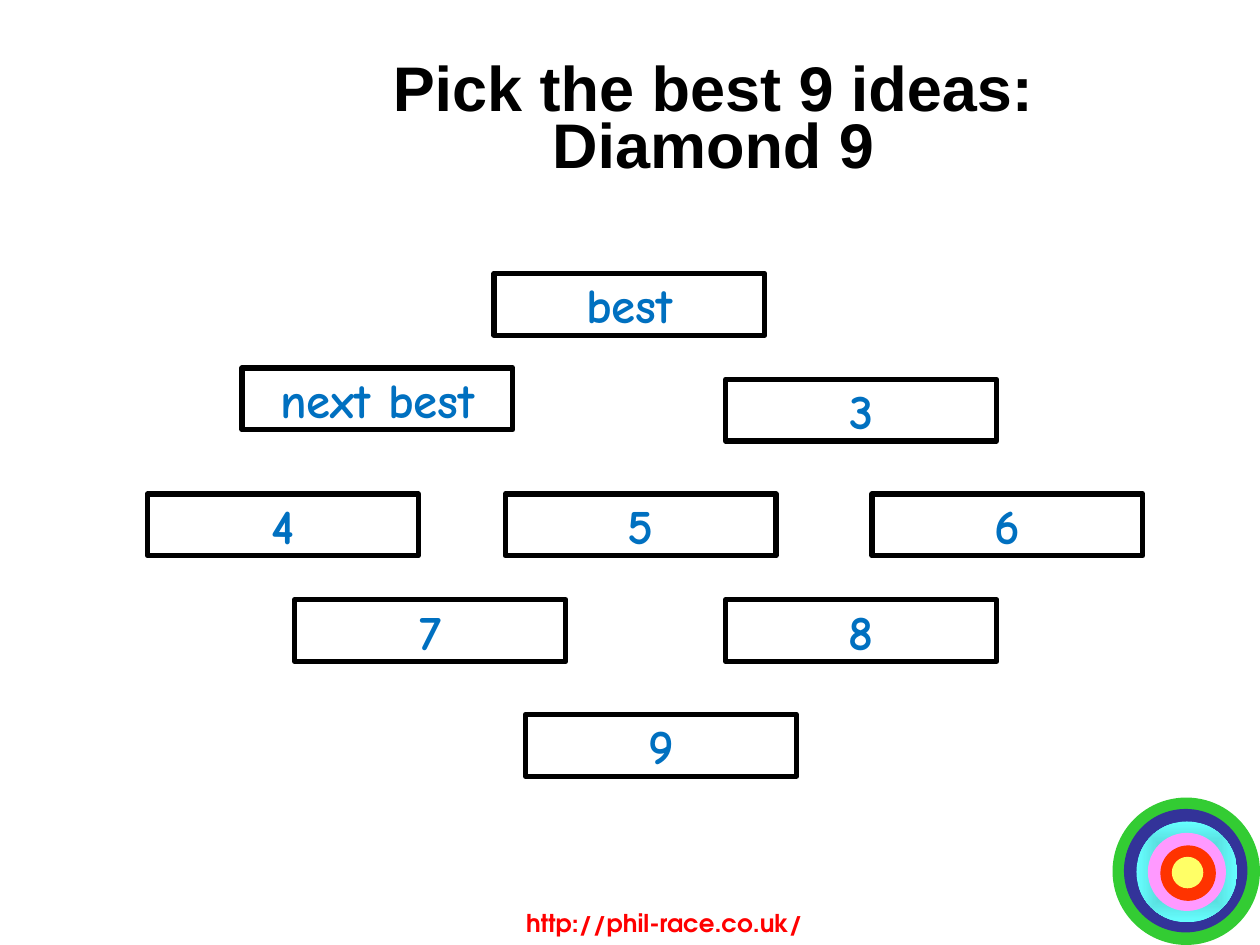
import pptx
import pptx.util
import pptx.oxml
import pptx.oxml.ns
import pptx.dml.color
import pptx.enum.shapes
import pptx.enum.text

Inches = pptx.util.Inches
SHAPES = pptx.enum.shapes.MSO_SHAPE
ANCHOR = pptx.enum.text.MSO_ANCHOR
AUTO_SIZE = pptx.enum.text.MSO_AUTO_SIZE

CARD_W, CARD_H = 2.15, 0.49
# Each card: label, left, top
CARDS = [
    ("best", 3.92, 2.17),
    ("next best", 1.92, 2.92), ("3", 5.76, 3.01),
    ("4", 1.17, 3.92), ("5", 4.01, 3.92), ("6", 6.92, 3.92),
    ("7", 2.34, 4.76), ("8", 5.76, 4.76),
    ("9", 4.17, 5.67),
]
# Rings from outermost to innermost: inset from the box, diameter, colour
RINGS = [
    (0, 1.17, "33CC33"), (0.09, 0.98, "333399"), (0.19, 0.8, "66FFFF"),
    (0.28, 0.62, "FF99FF"), (0.38, 0.44, "FF3300"), (0.47, 0.25, "FFFF66"),
]
GRADIENT_RING = 2


def rgb(value):
    return pptx.dml.color.RGBColor.from_string(value)


def write(tf, text, font, size, color, line_spacing=None):
    tf.text = text
    for p in tf.paragraphs:
        p.alignment = pptx.enum.text.PP_ALIGN.CENTER
        p.line_spacing = line_spacing
        for r in p.runs:
            r.font.name = font
            r.font.size = pptx.util.Pt(size)
            r.font.bold = True
            r.font.color.rgb = rgb(color)


def radial_fill(sp, inner, outer):
    sp.fill.gradient()
    for stop, color in zip(sp.fill.gradient_stops, (inner, outer)):
        stop.color.rgb = rgb(color)
    # Swap the linear direction for one that spreads from the centre
    grad = sp.fill._xPr.find(pptx.oxml.ns.qn("a:gradFill"))
    grad.replace(grad.find(pptx.oxml.ns.qn("a:lin")), pptx.oxml.parse_xml(
        '<a:path %s path="shape"><a:fillToRect l="50000" t="50000" '
        'r="50000" b="50000"/></a:path>' % pptx.oxml.ns.nsdecls("a")))


def add_target(s, left, top):
    for i, (inset, size, color) in enumerate(RINGS):
        sp = s.shapes.add_shape(SHAPES.OVAL, Inches(left + inset), Inches(top + inset),
                                Inches(size), Inches(size))
        sp.shadow.inherit = False
        sp.line.fill.background()
        if i == GRADIENT_RING:
            radial_fill(sp, "47B2B2", color)
        else:
            sp.fill.solid()
            sp.fill.fore_color.rgb = rgb(color)


def add_address(s, left, top, width, height):
    tf = s.shapes.add_textbox(Inches(left), Inches(top),
                              Inches(width), Inches(height)).text_frame
    tf.word_wrap = True
    tf.auto_size = AUTO_SIZE.SHAPE_TO_FIT_TEXT
    write(tf, "http://phil-race.co.uk/", "TeX Gyre Adventor", 14, "FF0000")


def add_title(s, left, top, width, height):
    tf = s.shapes.add_textbox(Inches(left), Inches(top),
                              Inches(width), Inches(height)).text_frame
    tf.word_wrap = True
    tf.auto_size = AUTO_SIZE.NONE
    tf.vertical_anchor = ANCHOR.MIDDLE
    write(tf, "Pick the best 9 ideas: \nDiamond 9 ", "Arial", 36, "000000", 0.75)


def add_card(s, label, left, top):
    sp = s.shapes.add_shape(SHAPES.RECTANGLE, Inches(left), Inches(top),
                            Inches(CARD_W), Inches(CARD_H))
    sp.shadow.inherit = False
    if label == "7":
        sp.fill.solid()
        sp.fill.fore_color.rgb = rgb("FFFFFF")
    else:
        sp.fill.background()
    sp.line.color.rgb = rgb("000000")
    sp.line.width = pptx.util.Pt(3)
    tf = sp.text_frame
    tf.word_wrap = False
    tf.vertical_anchor = ANCHOR.MIDDLE
    write(tf, label, "Comic Neue", 28, "0070C0")


def main():
    prs = pptx.Presentation()
    prs.slide_width, prs.slide_height = Inches(10), Inches(7.5)
    s = prs.slides.add_slide(prs.slide_layouts[6])

    # Corner decoration and footer
    add_target(s, 8.83, 6.33)
    add_address(s, 3.83, 7.16, 2.89, 0.34)

    # Title and diamond of ranked cards
    add_title(s, 1.46, 0.38, 8.54, 1.19)
    for label, left, top in CARDS:
        add_card(s, label, left, top)

    prs.save("out.pptx")


if __name__ == "__main__":
    main()
